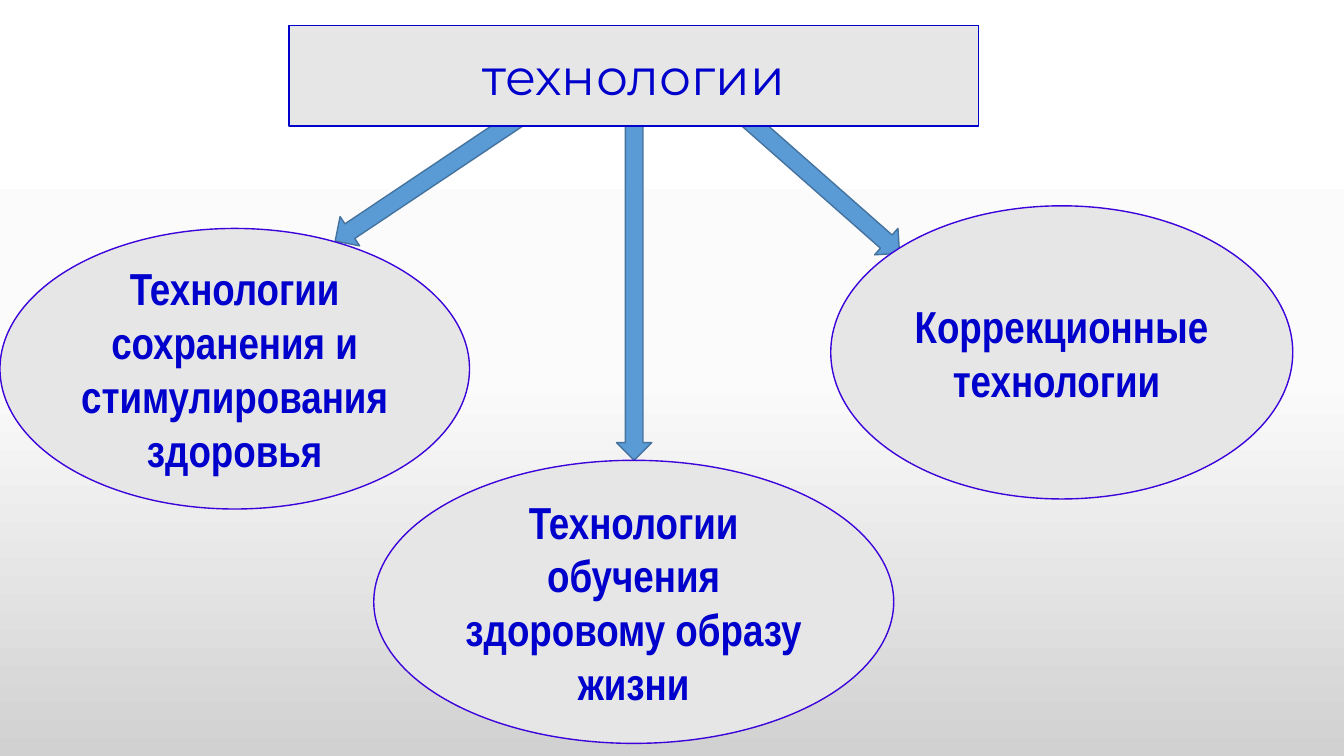
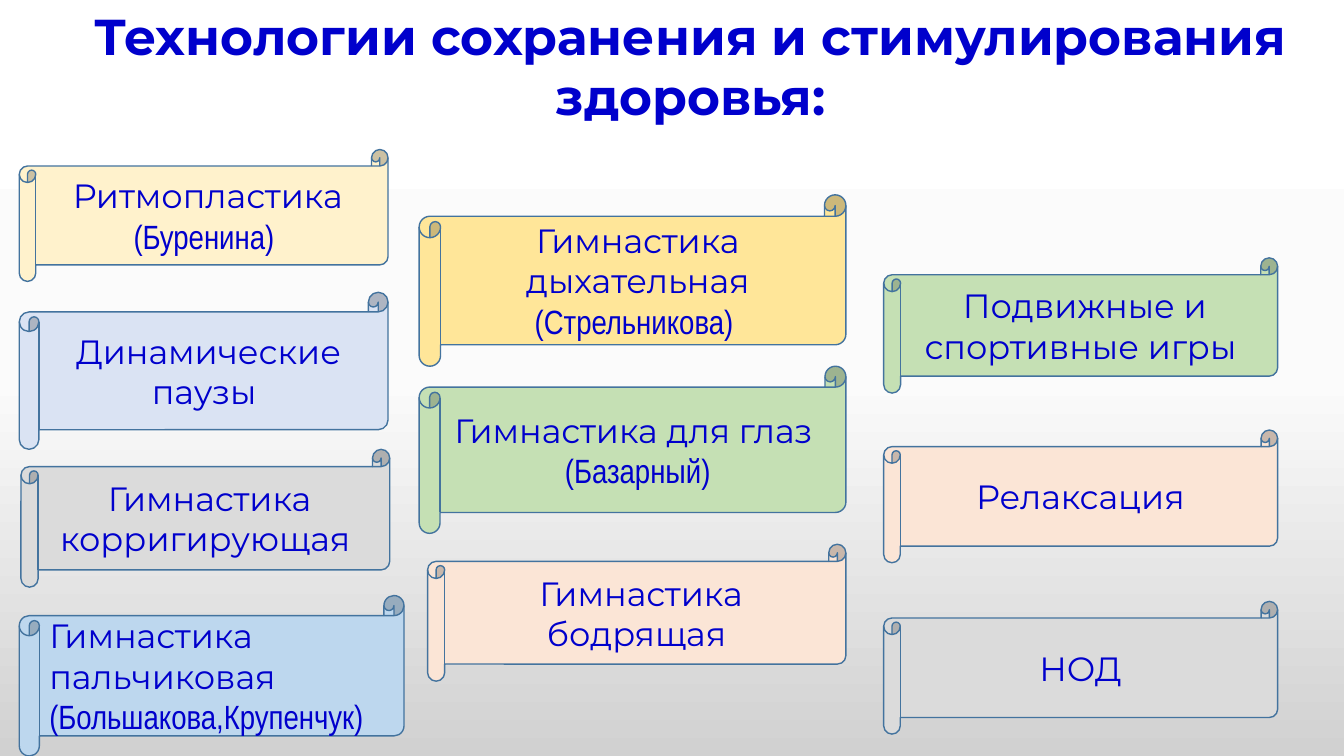
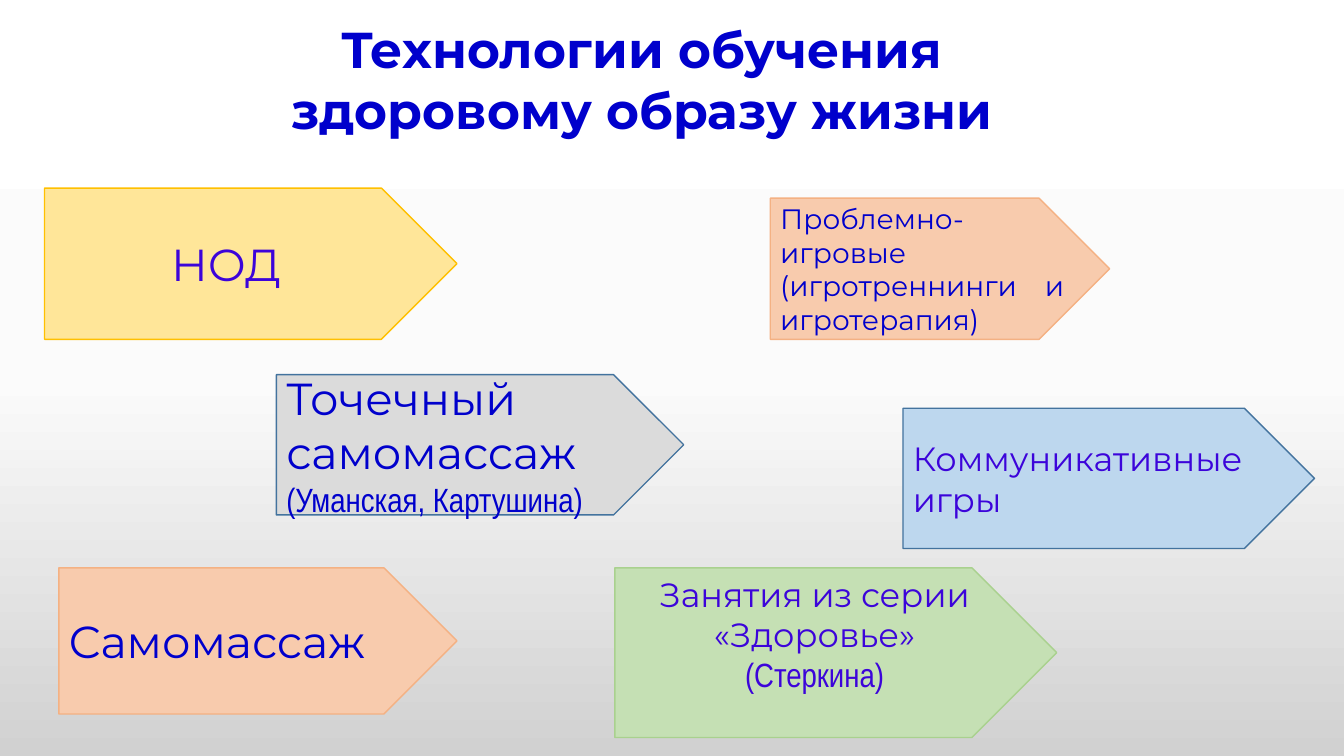
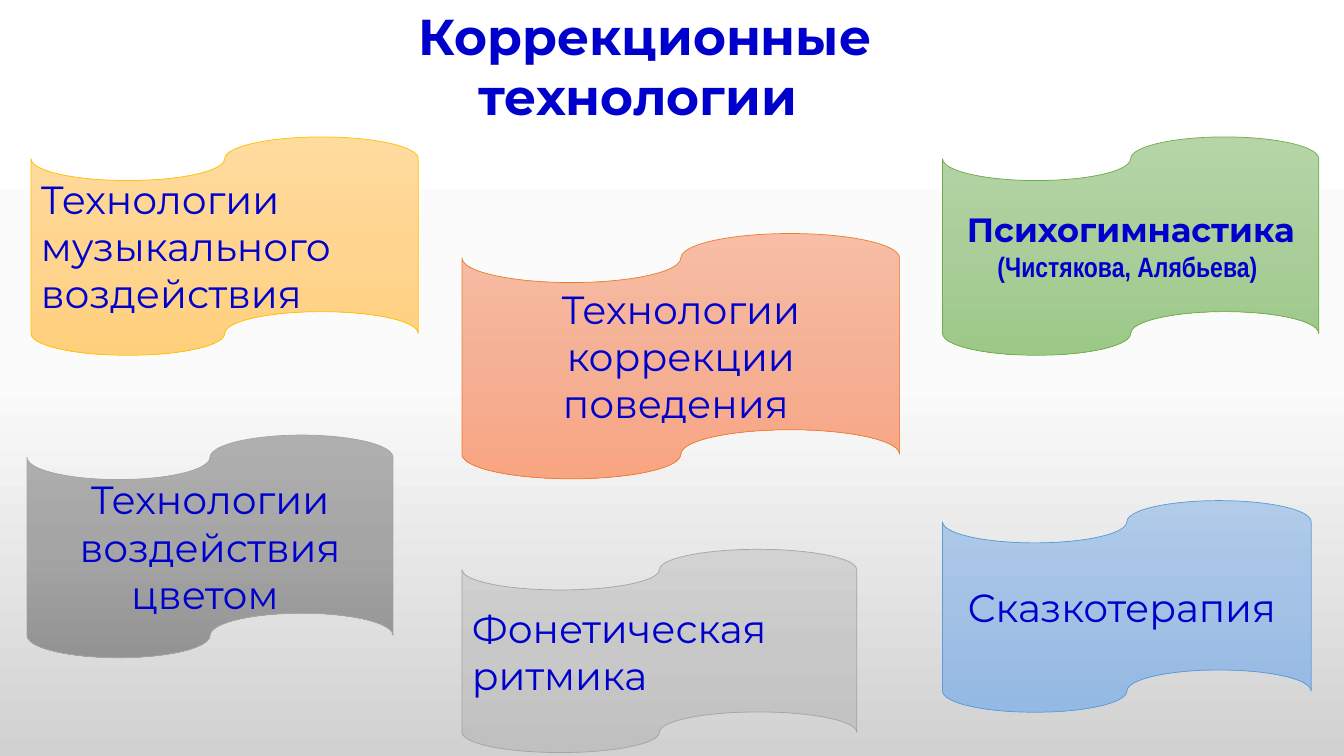
import copy

import pptx
import pptx.dml.color
import pptx.enum.shapes
import pptx.enum.text
import pptx.oxml.ns
import pptx.util

RGBColor = pptx.dml.color.RGBColor
SHAPE = pptx.enum.shapes.MSO_SHAPE
ALIGN = pptx.enum.text.PP_ALIGN
ANCHOR = pptx.enum.text.MSO_ANCHOR

# Grid: 16 columns by 9 rows of square cells
SLIDE_WIDTH = pptx.util.Inches(13.333)
SLIDE_HEIGHT = pptx.util.Inches(7.5)
CELL = SLIDE_HEIGHT / 9

# Fonts
MAIN_FONT = "Montserrat"
NARROW_FONT = "Arial Narrow"
NARROW = {"font": NARROW_FONT}

# Colours
BLUE = RGBColor(0x00, 0x00, 0xCC)
VIOLET = RGBColor(0x3C, 0x04, 0xDA)
ARROW_BLUE = RGBColor(0x5B, 0x9B, 0xD5)
STEEL = RGBColor(0x43, 0x73, 0x9E)
PALE_GRAY = RGBColor(0xE7, 0xE6, 0xE6)
GRAY = RGBColor(0xDB, 0xDB, 0xDB)
CREAM = RGBColor(0xFF, 0xF2, 0xCC)
YELLOW = RGBColor(0xFF, 0xE6, 0x99)
LAVENDER = RGBColor(0xDA, 0xE3, 0xF3)
SKY = RGBColor(0xBD, 0xD7, 0xEE)
GREEN = RGBColor(0xC5, 0xE0, 0xB4)
PEACH = RGBColor(0xFB, 0xE5, 0xD6)
SALMON = RGBColor(0xF8, 0xCB, 0xAD)
GOLD_LINE = RGBColor(0xFF, 0xC0, 0x00)
SALMON_LINE = RGBColor(0xF4, 0xB1, 0x83)
GREEN_LINE = RGBColor(0xA9, 0xD1, 0x8E)
ORANGE_LINE = RGBColor(0xED, 0x7D, 0x31)
GRAY_LINE = RGBColor(0xA5, 0xA5, 0xA5)
LEAF_LINE = RGBColor(0x70, 0xAD, 0x47)

# Vertical gradients, top to bottom
BACKGROUND = [RGBColor(0xFF, 0xFF, 0xFF), RGBColor(0xFB, 0xFB, 0xFB), RGBColor(0xD1, 0xD1, 0xD1)]
GOLD_BLEND = [RGBColor(0xFF, 0xDB, 0x9E), RGBColor(0xFF, 0xD5, 0x90), RGBColor(0xFF, 0xD0, 0x7C)]
DARK_BLEND = [RGBColor(0xAF, 0xAF, 0xAF), RGBColor(0xA5, 0xA5, 0xA5), RGBColor(0x93, 0x93, 0x93)]
ORANGE_BLEND = [RGBColor(0xF7, 0xBD, 0xA5), RGBColor(0xF5, 0xB1, 0x96), RGBColor(0xF8, 0xA5, 0x82)]
SILVER_BLEND = [RGBColor(0xD2, 0xD2, 0xD2), RGBColor(0xC8, 0xC8, 0xC8), RGBColor(0xC0, 0xC0, 0xC0)]
BLUE_BLEND = [RGBColor(0xB1, 0xCB, 0xE9), RGBColor(0xA3, 0xC1, 0xE5), RGBColor(0x93, 0xB9, 0xE4)]
LEAF_BLEND = [RGBColor(0xB5, 0xD5, 0xA7), RGBColor(0xAA, 0xCE, 0x9A), RGBColor(0x9C, 0xC9, 0x87)]


def cells(*counts):
    """Turn counts of grid cells into lengths."""
    return [round(count * CELL) for count in counts]


def blend(owner, fill, colors):
    """Fill with an evenly spaced vertical gradient of three colours."""
    fill.gradient()
    fill.gradient_angle = 270
    stop_list = owner.element.find(".//" + pptx.oxml.ns.qn("a:gsLst"))
    stop_list.append(copy.deepcopy(stop_list[0]))
    for index, (stop, color) in enumerate(zip(fill.gradient_stops, colors)):
        stop.position = index / 2
        stop.color.rgb = color


def paint(shape, fill, line, weight=1):
    if isinstance(fill, list):
        blend(shape, shape.fill, fill)
    else:
        shape.fill.solid()
        shape.fill.fore_color.rgb = fill
    shape.line.color.rgb = line
    shape.line.width = pptx.util.Pt(weight)


def write(frame, paragraphs, font=MAIN_FONT, size=24, color=BLUE, bold=False,
          align=ALIGN.CENTER, anchor=ANCHOR.MIDDLE):
    """Write paragraphs; each is a list of (text, format changes) spans."""
    frame.word_wrap = True
    frame.auto_size = pptx.enum.text.MSO_AUTO_SIZE.NONE
    frame.vertical_anchor = anchor
    for index, spans in enumerate(paragraphs):
        para = frame.add_paragraph() if index else frame.paragraphs[0]
        para.alignment = align
        for text, changes in spans:
            span = para.add_run()
            span.text = text
            span.font.name = changes.get("font", font)
            span.font.size = pptx.util.Pt(changes.get("size", size))
            span.font.color.rgb = color
            span.font.bold = bold


def plain(text):
    return [[(text, {})]]


def with_author(text, author, **changes):
    """A name with its author on a line of its own, in the narrow font."""
    return [[(text, {})], [(author, NARROW | changes)]]


def add_figure(page, kind, place, fill, line, paragraphs=(), weight=1, **text_format):
    figure = page.shapes.add_shape(kind, *cells(*place))
    figure.shadow.inherit = False
    paint(figure, fill, line, weight)
    write(figure.text_frame, paragraphs, **text_format)
    return figure


def add_page(deck, title, place, bold=True, anchor=ANCHOR.TOP):
    page = deck.slides.add_slide(deck.slide_layouts[5])
    box = page.shapes.title
    box.left, box.top, box.width, box.height = cells(*place)
    write(box.text_frame, plain(title), size=36, bold=bold, anchor=anchor)
    return page


def add_overview(deck):
    page = add_page(deck, "технологии", (3.44, 0.3, 8.21, 1.2), bold=False, anchor=ANCHOR.MIDDLE)
    title = page.shapes.title
    paint(title, PALE_GRAY, BLUE)

    # Block arrows: left, top, length, rotation
    for left, top, length, turn in [(9.58, 0.98, 2.45, 311.4), (4.96, 0.66, 2.84, 56.2),
                                    (7.34, 1.5, 3.98, 0)]:
        arrow = add_figure(page, SHAPE.DOWN_ARROW, (left, top, 0.42, length), ARROW_BLUE, STEEL)
        arrow.rotation = turn

    # Ellipses
    for text, place in [
        ("Технологии сохранения и стимулирования здоровья", (0, 2.72, 5.59, 3.34)),
        ("Технологии обучения здоровому образу жизни", (4.45, 5.48, 6.19, 3.37)),
        ("Коррекционные технологии ", (9.89, 2.45, 5.5, 3.49)),
    ]:
        add_figure(page, SHAPE.OVAL, place, PALE_GRAY, VIOLET, plain(text),
                   font=NARROW_FONT, size=32, bold=True)

    # The title covers the ends of the arrows
    title.element.getparent().append(title.element)


def add_health_page(deck):
    page = add_page(deck, "Технологии сохранения и стимулирования здоровья:", (0.78, 0, 14.88, 2.22))
    finger_gymnastics = [[("Гимнастика пальчиковая ", {}), ("(Большакова,Крупенчук)", NARROW)]]
    scrolls = [
        # Left column
        ((0.23, 1.78, 4.39, 1.57), CREAM, with_author("Ритмопластика", "(Буренина) "), ALIGN.CENTER),
        ((0.23, 3.48, 4.39, 1.87), LAVENDER, plain("Динамические паузы "), ALIGN.CENTER),
        ((0.25, 5.35, 4.39, 1.64), GRAY, plain("Гимнастика корригирующая "), ALIGN.CENTER),
        ((0.23, 7.09, 4.58, 1.91), SKY, finger_gymnastics, ALIGN.JUSTIFY),
        # Middle column
        ((4.99, 2.32, 5.08, 2.04), YELLOW,
         with_author("Гимнастика дыхательная", "(Стрельникова) "), ALIGN.CENTER),
        ((4.99, 4.36, 5.08, 1.99), GREEN,
         with_author("Гимнастика для глаз ", "(Базарный)"), ALIGN.CENTER),
        ((5.09, 6.48, 4.98, 1.63), PEACH, plain("Гимнастика бодрящая "), ALIGN.CENTER),
        # Right column
        ((10.52, 3.07, 4.69, 1.61), GREEN, plain("Подвижные и спортивные игры "), ALIGN.CENTER),
        ((10.52, 5.12, 4.69, 1.58), PEACH, plain("Релаксация "), ALIGN.CENTER),
        ((10.52, 7.16, 4.69, 1.58), GRAY, plain("НОД "), ALIGN.CENTER),
    ]
    for place, fill, paragraphs, align in scrolls:
        add_figure(page, SHAPE.HORIZONTAL_SCROLL, place, fill, STEEL, paragraphs, align=align)


def add_learning_page(deck):
    page = add_page(deck, "Технологии обучения здоровому образу жизни ", (3.28, 0.16, 8.72, 2.66))

    def add_plate(place, fill, line, paragraphs, size=24, color=BLUE, align=ALIGN.JUSTIFY):
        return add_figure(page, SHAPE.PENTAGON, place, fill, line, paragraphs,
                          size=size, color=color, align=align)

    add_plate((0.53, 2.24, 4.91, 1.8), YELLOW, GOLD_LINE, plain("НОД "),
              size=32, color=VIOLET, align=ALIGN.CENTER)
    add_plate((3.29, 4.46, 4.85, 1.67), GRAY, STEEL,
              with_author("Точечный самомассаж", "(Уманская, Картушина) ", size=24), size=32)
    add_plate((0.7, 6.76, 4.74, 1.74), SALMON, SALMON_LINE, plain("Самомассаж "), size=32)
    lessons = add_plate((7.32, 6.76, 5.26, 2.02), GREEN, GREEN_LINE,
                        with_author("Занятия из серии «Здоровье»", "(Стеркина)"),
                        color=VIOLET, align=ALIGN.CENTER)
    lessons.text_frame.margin_bottom = cells(0.5)[0]
    add_plate((10.75, 4.86, 4.9, 1.67), SKY, STEEL, plain("Коммуникативные игры "), color=VIOLET)
    add_plate((9.17, 2.36, 4.04, 1.68), SALMON, SALMON_LINE,
              plain("Проблемно-игровые (игротреннинги и игротерапия) "), size=20)


def add_correction_page(deck):
    page = add_page(deck, "Коррекционные технологии ", (3.68, 0, 8, 1.57))
    tapes = [
        ((0.37, 1.63, 4.61, 2.6), GOLD_BLEND, GOLD_LINE,
         "Технологии музыкального воздействия ", ALIGN.JUSTIFY),
        ((0.32, 5.18, 4.36, 2.65), DARK_BLEND, GRAY_LINE,
         "Технологии воздействия цветом ", ALIGN.CENTER),
        ((5.5, 2.78, 5.21, 2.92), ORANGE_BLEND, ORANGE_LINE,
         "Технологии коррекции поведения ", ALIGN.CENTER),
        ((5.5, 6.54, 4.7, 2.42), SILVER_BLEND, GRAY_LINE, "Фонетическая ритмика ", ALIGN.JUSTIFY),
        ((11.22, 5.96, 4.39, 2.52), BLUE_BLEND, ARROW_BLUE, "Сказкотерапия ", ALIGN.CENTER),
    ]
    for place, fill, line, text, align in tapes:
        add_figure(page, SHAPE.FLOWCHART_PUNCHED_TAPE, place, fill, line, plain(text),
                   weight=0.5, size=28, align=align)
    add_figure(page, SHAPE.FLOWCHART_PUNCHED_TAPE, (11.22, 1.63, 4.48, 2.6), LEAF_BLEND, LEAF_LINE,
               with_author("Психогимнастика", "(Чистякова, Алябьева) ", size=20),
               weight=0.5, bold=True)


def main():
    deck = pptx.Presentation()
    deck.slide_width, deck.slide_height = SLIDE_WIDTH, SLIDE_HEIGHT
    blend(deck.slide_master, deck.slide_master.background.fill, BACKGROUND)
    add_overview(deck)
    add_health_page(deck)
    add_learning_page(deck)
    add_correction_page(deck)
    deck.save("out.pptx")


if __name__ == "__main__":
    main()
